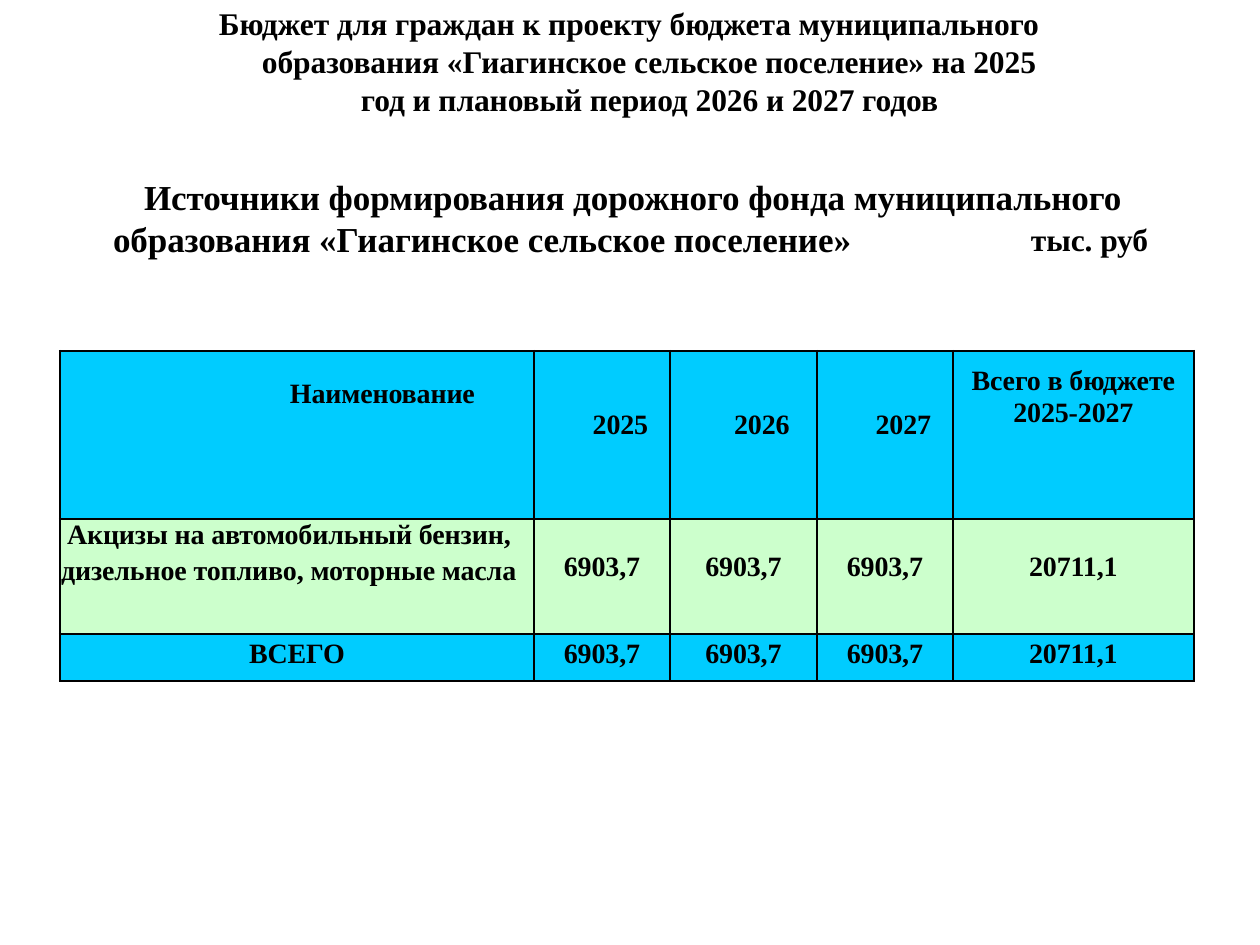
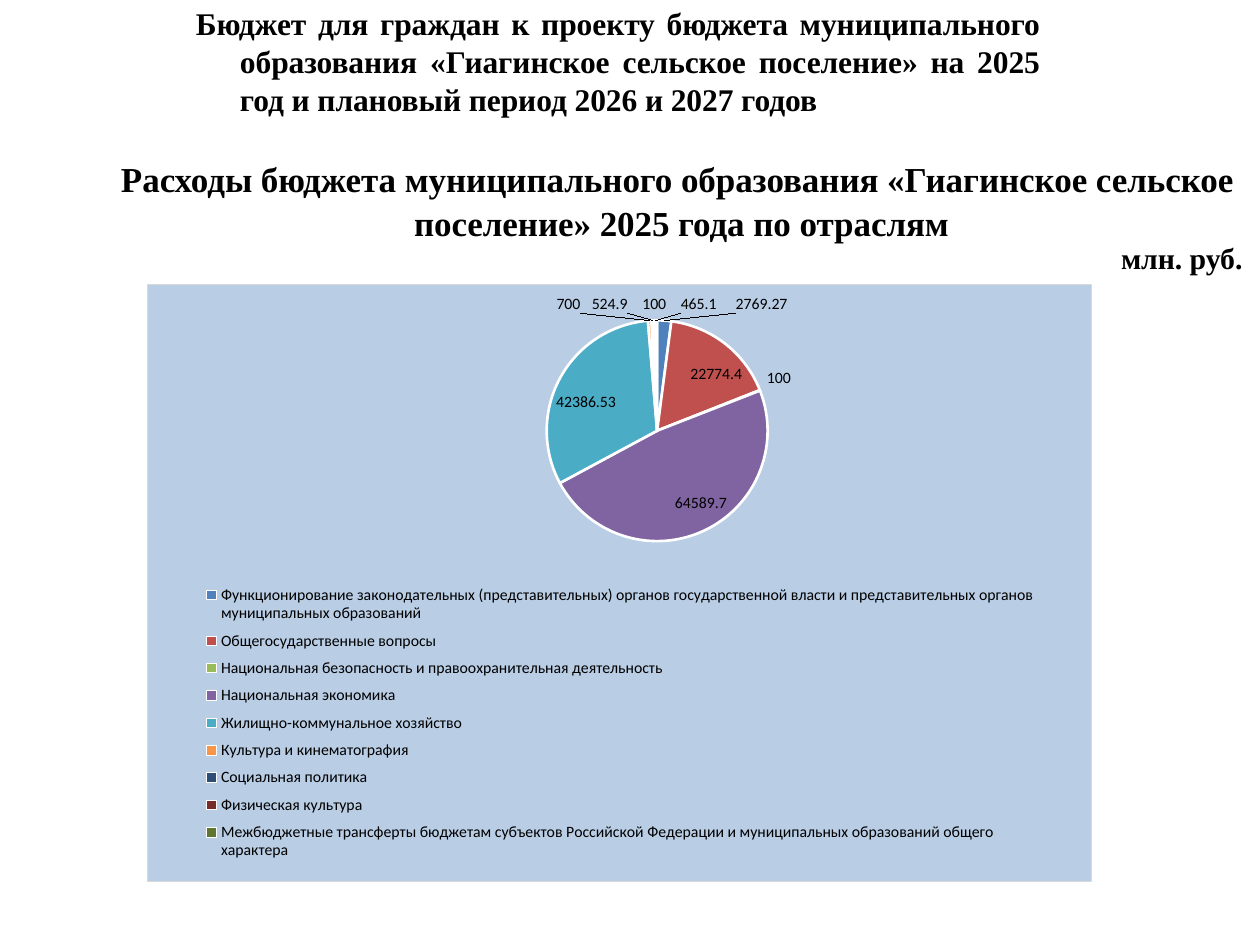
from dataclasses import dataclass

from lxml import etree
from pptx import Presentation
from pptx import util as u
from pptx.chart import data as chart_data
from pptx.dml import color
from pptx.enum import chart as chart_enum
from pptx.enum import text as text_enum
from pptx.oxml import parse_xml
from pptx.oxml import ns

SCALE = 914400 / 126
FONT = "Times New Roman"
CHART_FONT = "Calibri"
BLACK = "000000"
WHITE = "FFFFFF"
HEADER_BLUE = "00CCFF"
ROW_GREEN = "CCFFCC"
CHART_BLUE = "B9CDE5"
CHART_BORDER = "D9D9D9"
LEFT = text_enum.PP_ALIGN.LEFT
CENTER = text_enum.PP_ALIGN.CENTER
JUSTIFY = text_enum.PP_ALIGN.JUSTIFY


@dataclass
class Line:
    text: str
    left: int = 0
    first: int = 0
    before: float = 0


@dataclass
class Block:
    left: int
    top: int
    width: int
    height: int
    lines: list[Line]
    size: int = 20
    align: text_enum.PP_ALIGN = LEFT


@dataclass
class Cell:
    lines: list[Line]
    top: int
    left: int = 0
    align: text_enum.PP_ALIGN = CENTER


@dataclass
class Row:
    height: int
    fill: str
    cells: list[Cell]


@dataclass
class Sector:
    name: str
    value: float
    fill: str


HEADING = "Бюджет для граждан к проекту бюджета муниципального образования «Гиагинское сельское поселение» на 2025"
HEADING_END = "год и плановый период 2026 и 2027 годов"

ROAD_FUND_BLOCKS = [
    Block(215, 3, 830, 117, [Line(HEADING, 47, -43), Line(HEADING_END, 146)], 18),
    Block(143, 174, 1000, 45, [Line("Источники формирования дорожного фонда муниципального", 1)]),
    Block(112, 216, 760, 45, [Line("образования «Гиагинское сельское поселение»", 1)]),
    Block(1030, 219, 130, 41, [Line("тыс. руб", 1)], 18),
]
EXPENSE_BLOCKS = [
    Block(195, 3, 845, 117, [Line(f"{HEADING} {HEADING_END}", 45, -44)], 18, JUSTIFY),
    Block(120, 156, 1130, 45, [Line("Расходы бюджета муниципального образования «Гиагинское сельское", 1)]),
    Block(413, 200, 600, 45, [Line("поселение» 2025 года по отраслям", 1)]),
    Block(1120, 239, 130, 39, [Line("млн. руб.", 1)], 17),
]

COLUMN_WIDTHS = [474, 136, 147, 136, 241]
YEARS = ["2025", "2026", "2027"]
AMOUNTS = ["6903,7"] * 3 + ["20711,1"]
FUND_ROWS = [
    Row(168, HEADER_BLUE, [
        Cell([Line("Наименование")], 27, 230, LEFT),
        *[Cell([Line(year)], 59, 37) for year in YEARS],
        Cell([Line("Всего в бюджете"), Line("2025-2027")], 15),
    ]),
    Row(115, ROW_GREEN, [
        Cell([Line("Акцизы на автомобильный бензин,", 7),
              Line("дизельное топливо, моторные масла", 1, before=2.8)], 1, 0, LEFT),
        *[Cell([Line(amount)], 33) for amount in AMOUNTS],
    ]),
    Row(47, HEADER_BLUE, [Cell([Line(amount)], 5) for amount in ["ВСЕГО", *AMOUNTS]]),
]

SECTORS = [
    Sector("Функционирование законодательных (представительных) органов государственной власти "
           "и представительных органов муниципальных образований", 2769.27, "4F81BD"),
    Sector("Общегосударственные вопросы", 22774.4, "C0504D"),
    Sector("Национальная безопасность и правоохранительная деятельность", 100, "9BBB59"),
    Sector("Национальная экономика", 64589.7, "8064A2"),
    Sector("Жилищно-коммунальное хозяйство", 42386.53, "4BACC6"),
    Sector("Культура и кинематография", 700, "F79646"),
    Sector("Социальная политика", 524.9, "2C4D75"),
    Sector("Физическая культура", 100, "772C2A"),
    Sector("Межбюджетные трансферты бюджетам субъектов Российской Федерации "
           "и муниципальных образований общего характера", 465.1, "5F7530"),
]


def px(length: int) -> u.Emu:
    return u.Emu(round(length * SCALE))


def rgb(value: str) -> color.RGBColor:
    return color.RGBColor.from_string(value)


def write_text(paragraph, text: str, *, size: int, align=LEFT, left: int = 0,
               first: int = 0, before: float = 0) -> None:
    properties = paragraph._p.get_or_add_pPr()
    properties.set("marL", str(px(left)))
    properties.set("indent", str(px(first)))
    paragraph.alignment = align
    paragraph.space_before = u.Pt(before)
    run = paragraph.add_run()
    run.text = text
    run.font.name = FONT
    run.font.size = u.Pt(size)
    run.font.bold = True
    run.font.color.rgb = rgb(BLACK)
    run._r.get_or_add_rPr().set("spc", "-5")


def write_lines(frame, lines: list[Line], *, size: int, align) -> None:
    for index, line in enumerate(lines):
        paragraph = frame.add_paragraph() if index else frame.paragraphs[0]
        write_text(paragraph, line.text, size=size, align=align, left=line.left,
                   first=line.first, before=line.before)


def add_block(slide, block: Block) -> None:
    shape = slide.shapes.add_textbox(px(block.left), px(block.top), px(block.width), px(block.height))
    frame = shape.text_frame
    frame.word_wrap = True
    frame.margin_left = frame.margin_right = frame.margin_bottom = 0
    frame.margin_top = px(1)
    write_lines(frame, block.lines, size=block.size, align=block.align)


def add_cell_borders(cell) -> None:
    properties = cell._tc.get_or_add_tcPr()
    for index, side in enumerate(("lnL", "lnR", "lnT", "lnB")):
        border = parse_xml(
            f'<a:{side} {ns.nsdecls("a")} w="{u.Pt(1.5)}"><a:solidFill>'
            f'<a:srgbClr val="{BLACK}"/></a:solidFill></a:{side}>')
        properties.insert(index, border)


def add_fund_table(slide) -> None:
    frame = slide.shapes.add_table(
        len(FUND_ROWS), len(COLUMN_WIDTHS), px(60), px(351),
        px(sum(COLUMN_WIDTHS)), px(sum(row.height for row in FUND_ROWS)))
    table = frame.table
    for column, width in zip(table.columns, COLUMN_WIDTHS):
        column.width = px(width)
    for table_row, row in zip(table.rows, FUND_ROWS):
        table_row.height = px(row.height)
        for cell, content in zip(table_row.cells, row.cells):
            cell.margin_left, cell.margin_top = px(content.left), px(content.top)
            cell.margin_right = cell.margin_bottom = 0
            cell.fill.solid()
            cell.fill.fore_color.rgb = rgb(row.fill)
            add_cell_borders(cell)
            write_lines(cell.text_frame, content.lines, size=16, align=content.align)


def set_layout(element, position: int, target: str, x: float, y: float, w: float, h: float) -> None:
    for old in element.findall(ns.qn("c:layout")):
        element.remove(old)
    layout = etree.Element(ns.qn("c:layout"))
    manual = etree.SubElement(layout, ns.qn("c:manualLayout"))
    settings = {"layoutTarget": target} if target else {}
    settings |= {"xMode": "edge", "yMode": "edge", "x": x, "y": y, "w": w, "h": h}
    for name, value in settings.items():
        etree.SubElement(manual, ns.qn(f"c:{name}")).set("val", str(value))
    element.insert(position, layout)


def set_chart_font(font, size: int) -> None:
    font.name = CHART_FONT
    font.size = u.Pt(size)
    font.color.rgb = rgb(BLACK)


def add_expense_chart(slide) -> None:
    data = chart_data.CategoryChartData()
    data.categories = [sector.name for sector in SECTORS]
    data.add_series("Расходы", [sector.value for sector in SECTORS])
    chart = slide.shapes.add_chart(
        chart_enum.XL_CHART_TYPE.PIE, px(147), px(284), px(945), px(598), data).chart
    chart.has_title = False
    set_chart_font(chart.font, 10)

    chart.has_legend = True
    legend = chart.legend
    legend.position = chart_enum.XL_LEGEND_POSITION.BOTTOM
    legend.include_in_layout = False
    set_chart_font(legend.font, 9)
    set_layout(legend._element, 1, "", 0.05, 0.49, 0.9, 0.49)

    plot = chart.plots[0]
    plot.vary_by_categories = True
    series = plot.series[0]
    for index, sector in enumerate(SECTORS):
        slice_format = series.points[index].format
        slice_format.fill.solid()
        slice_format.fill.fore_color.rgb = rgb(sector.fill)
        slice_format.line.color.rgb = rgb(WHITE)
        slice_format.line.width = u.Pt(1.5)
    labels = series.data_labels
    labels.show_value = True
    labels.number_format = "General"
    labels.number_format_is_linked = False
    labels.position = chart_enum.XL_LABEL_POSITION.BEST_FIT
    set_chart_font(labels.font, 9)

    chart_root = chart._chartSpace.find(ns.qn("c:chart"))
    set_layout(chart_root.find(ns.qn("c:plotArea")), 0, "inner", 0.08, 0.06, 0.92, 0.37)
    chart_root.addnext(parse_xml(
        f'<c:spPr {ns.nsdecls("c", "a")}>'
        f'<a:solidFill><a:srgbClr val="{CHART_BLUE}"/></a:solidFill>'
        f'<a:ln w="{u.Pt(0.75)}"><a:solidFill><a:srgbClr val="{CHART_BORDER}"/></a:solidFill></a:ln>'
        '</c:spPr>'))


def add_slide(presentation, blocks: list[Block]):
    slide = presentation.slides.add_slide(presentation.slide_layouts[6])
    for block in blocks:
        add_block(slide, block)
    return slide


def main() -> None:
    presentation = Presentation()
    presentation.slide_width = px(1260)
    presentation.slide_height = px(945)
    add_fund_table(add_slide(presentation, ROAD_FUND_BLOCKS))
    add_expense_chart(add_slide(presentation, EXPENSE_BLOCKS))
    presentation.save("out.pptx")


if __name__ == "__main__":
    main()
